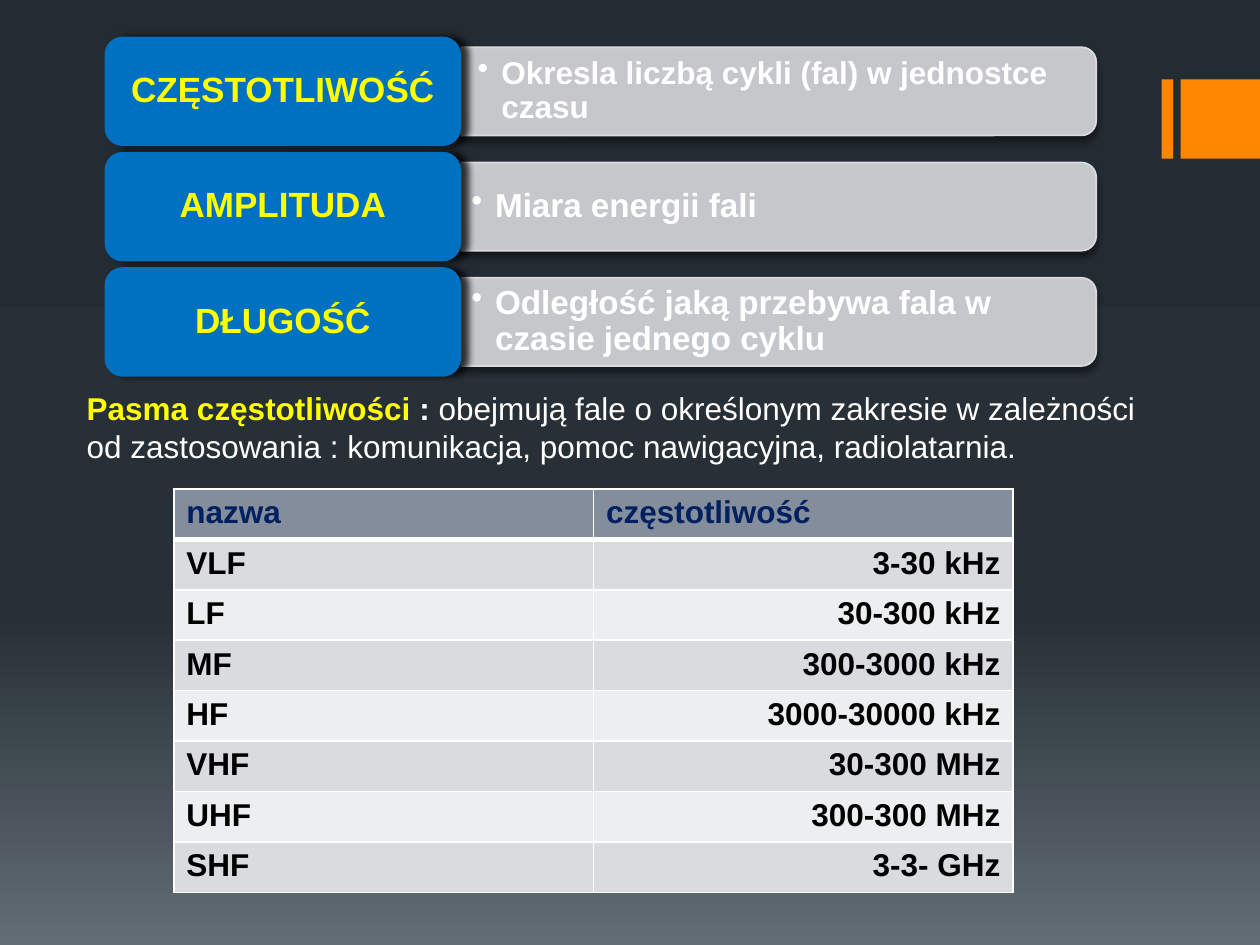
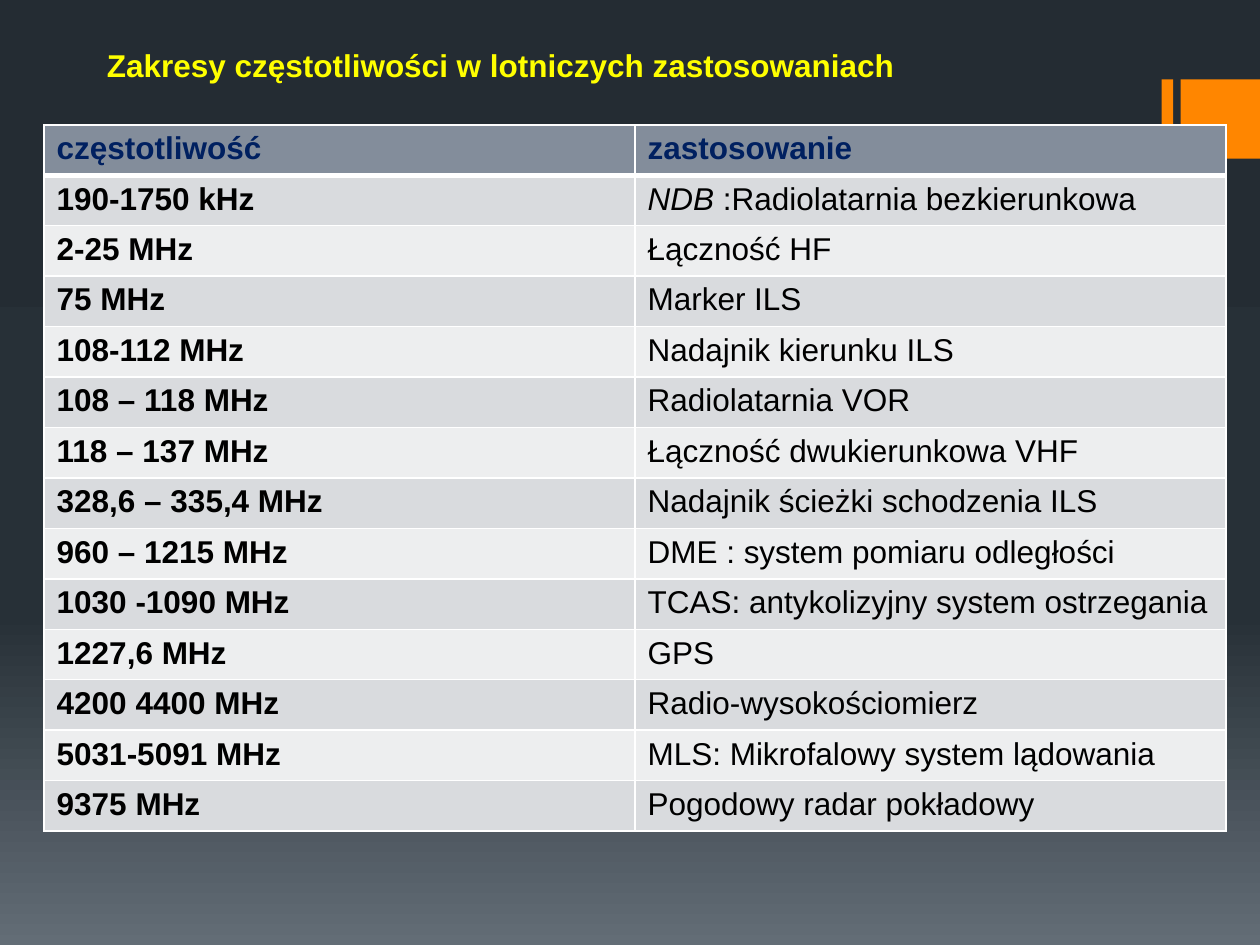
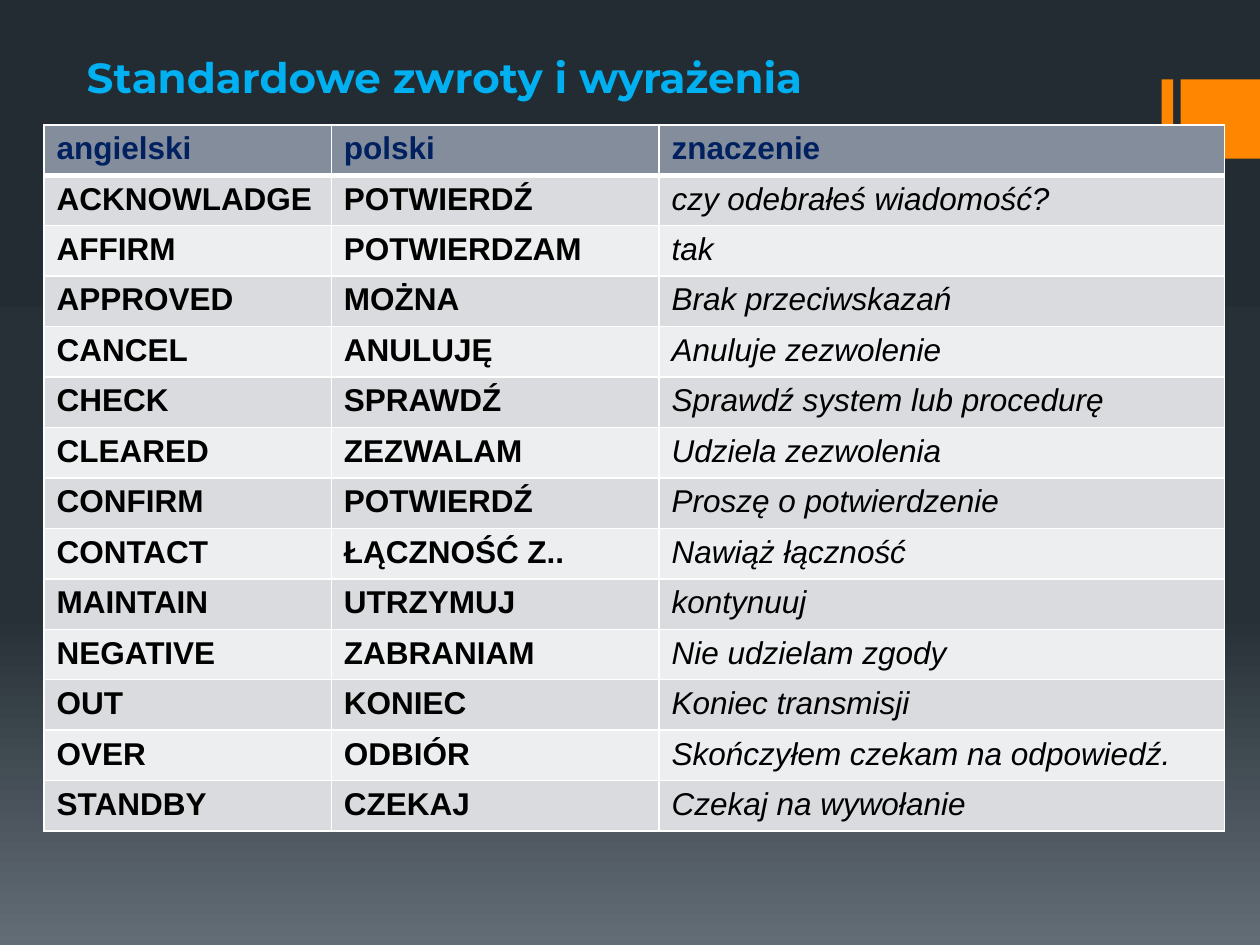
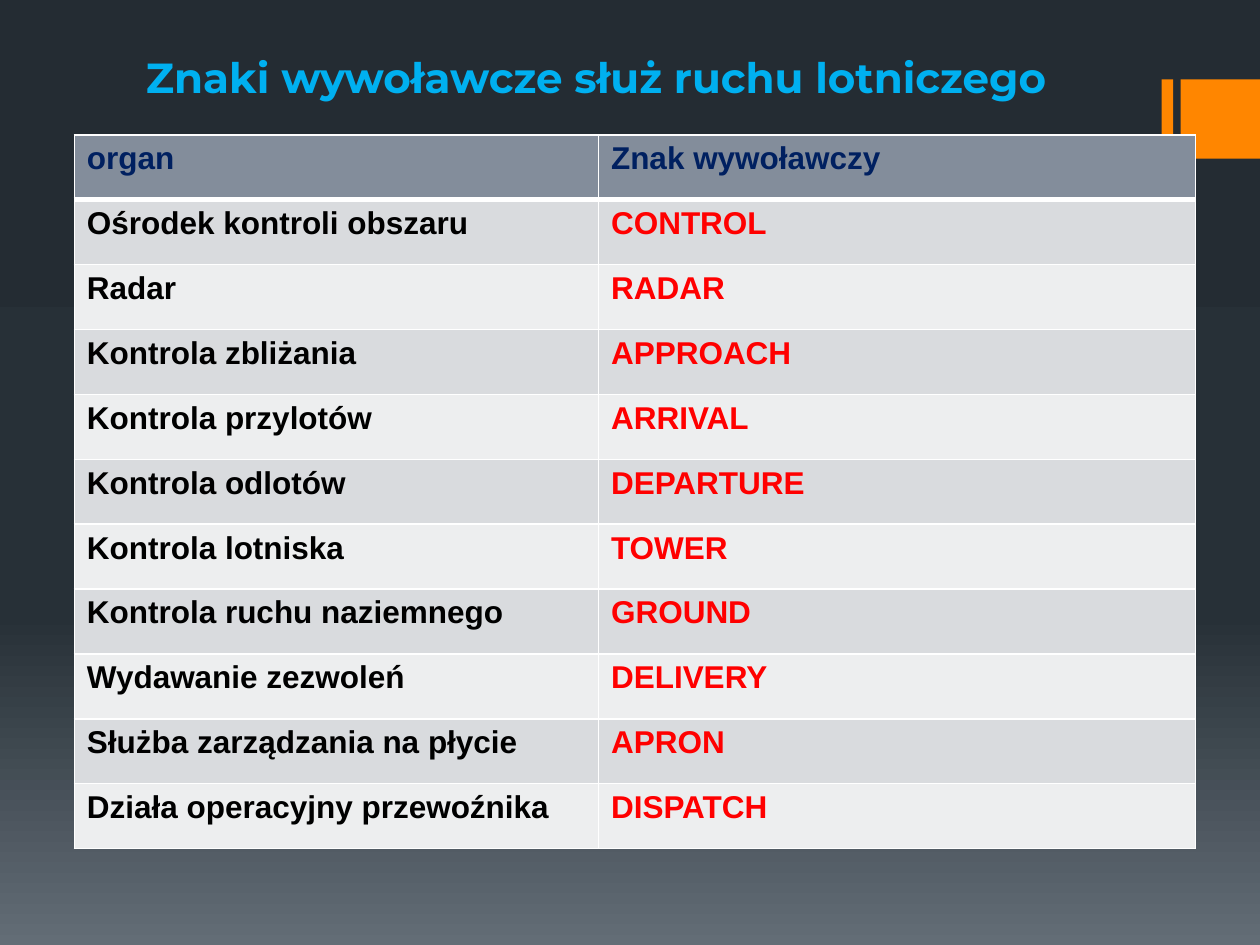
from dataclasses import dataclass
from typing import Optional, Union

import pptx
import pptx.dml.color
import pptx.enum.shapes
import pptx.enum.text
import pptx.oxml
import pptx.oxml.ns
import pptx.util

Inches = pptx.util.Inches
Pt = pptx.util.Pt
SHAPE = pptx.enum.shapes.MSO_SHAPE
ALIGN = pptx.enum.text.PP_ALIGN
MIDDLE = pptx.enum.text.MSO_ANCHOR.MIDDLE
NAMESPACE = pptx.oxml.ns.nsdecls("a")

COLORS = {
    "sky": "242C33",
    "dusk": "273037",
    "horizon": "636D76",
    "accent": "FF8600",
    "band": "D9DBDE",
    "light_band": "EDEEEF",
    "header": "838D9B",
    "header_text": "002060",
    "term": "0070C0",
    "highlight": "FFFF00",
    "title": "00B0F0",
    "call_sign": "FF0000",
    "white": "FFFFFF",
    "black": "000000",
}


@dataclass(frozen=True)
class TextStyle:
    color: str
    size: int = 18
    bold: bool = True
    italic: bool = False
    face: str = "Arial"
    align: Optional[ALIGN] = None


@dataclass(frozen=True)
class Run:
    text: str
    style: TextStyle


Content = Union[str, tuple[Run, ...]]


@dataclass(frozen=True)
class Definition:
    term: str
    meaning: str
    size: int = 19
    inset_x: float = 0.08
    inset_y: float = 0.04


@dataclass(frozen=True)
class Column:
    heading: str
    width: float
    style: TextStyle


@dataclass(frozen=True)
class Grid:
    left: float
    top: float
    row_height: float
    columns: tuple[Column, ...]
    rows: tuple[tuple[Content, ...], ...]


BOLD = TextStyle("black")
PLAIN = TextStyle("black", bold=False)
ITALIC = TextStyle("black", bold=False, italic=True)
RIGHT = TextStyle("black", align=ALIGN.RIGHT)
CALL_SIGN = TextStyle("call_sign")
HEADER = TextStyle("header_text")
HIGHLIGHT = TextStyle("highlight")
TERM = TextStyle("highlight", size=20, align=ALIGN.CENTER)
TITLE = TextStyle("title", size=24, face="Montserrat")

DEFINITIONS = (
    Definition("CZĘSTOTLIWOŚĆ", "Okresla liczbą cykli (fal) w jednostce czasu", 18, 0.13, 0.06),
    Definition("AMPLITUDA", "Miara energii fali"),
    Definition("DŁUGOŚĆ", "Odległość jaką przebywa fala w czasie jednego cyklu"),
)

BANDS_INTRO = (
    Run("Pasma częstotliwości ", HIGHLIGHT),
    Run(": ", TextStyle("white")),
    Run(
        "obejmują fale o określonym zakresie w zależności od zastosowania : "
        "komunikacja, pomoc nawigacyjna, radiolatarnia.",
        TextStyle("white", bold=False),
    ),
)

BANDS = Grid(
    1.38, 3.88, 0.4,
    (Column("nazwa", 3.33, BOLD), Column("częstotliwość", 3.33, RIGHT)),
    (
        ("VLF", "3-30 kHz"),
        ("LF", "30-300 kHz"),
        ("MF", "300-3000 kHz"),
        ("HF", "3000-30000 kHz"),
        ("VHF", "30-300 MHz"),
        ("UHF", "300-300 MHz"),
        ("SHF", "3-3- GHz"),
    ),
)

USES = Grid(
    0.35, 0.99, 0.4,
    (Column("częstotliwość", 4.69, BOLD), Column("zastosowanie", 4.69, PLAIN)),
    (
        ("190-1750 kHz", (Run("NDB", ITALIC), Run(" :Radiolatarnia bezkierunkowa", PLAIN))),
        ("2-25 MHz", "Łączność HF"),
        ("75 MHz", "Marker ILS"),
        ("108-112 MHz", "Nadajnik kierunku ILS"),
        ("108 – 118 MHz", "Radiolatarnia VOR"),
        ("118 – 137 MHz", "Łączność dwukierunkowa VHF"),
        ("328,6 – 335,4 MHz", "Nadajnik ścieżki schodzenia ILS"),
        ("960 – 1215 MHz", "DME : system pomiaru odległości"),
        ("1030 -1090 MHz", "TCAS: antykolizyjny system ostrzegania"),
        ("1227,6 MHz", "GPS"),
        ("4200 4400 MHz", "Radio-wysokościomierz"),
        ("5031-5091 MHz", "MLS: Mikrofalowy system lądowania"),
        ("9375 MHz", "Pogodowy radar pokładowy"),
    ),
)

PHRASES = Grid(
    0.35, 0.99, 0.4,
    (Column("angielski", 2.28, BOLD), Column("polski", 2.6, BOLD), Column("znaczenie", 4.49, ITALIC)),
    (
        ("ACKNOWLADGE", "POTWIERDŹ", "czy odebrałeś wiadomość?"),
        ("AFFIRM", "POTWIERDZAM", "tak"),
        ("APPROVED", "MOŻNA", "Brak przeciwskazań"),
        ("CANCEL", "ANULUJĘ", "Anuluje zezwolenie"),
        ("CHECK", "SPRAWDŹ", "Sprawdź system lub procedurę"),
        ("CLEARED", "ZEZWALAM", "Udziela zezwolenia"),
        ("CONFIRM", "POTWIERDŹ", "Proszę o potwierdzenie"),
        ("CONTACT", "ŁĄCZNOŚĆ Z..", "Nawiąż łączność"),
        ("MAINTAIN", "UTRZYMUJ", "kontynuuj"),
        ("NEGATIVE", "ZABRANIAM", "Nie udzielam zgody"),
        ("OUT", "KONIEC", "Koniec transmisji"),
        ("OVER", "ODBIÓR", "Skończyłem czekam na odpowiedź."),
        ("STANDBY", "CZEKAJ", "Czekaj na wywołanie"),
    ),
)

CALL_SIGNS = Grid(
    0.59, 1.07, 0.515,
    (Column("organ", 4.16, BOLD), Column("Znak wywoławczy", 4.74, CALL_SIGN)),
    (
        ("Ośrodek kontroli obszaru", "CONTROL"),
        ("Radar", "RADAR"),
        ("Kontrola zbliżania", "APPROACH"),
        ("Kontrola przylotów", "ARRIVAL"),
        ("Kontrola odlotów", "DEPARTURE"),
        ("Kontrola lotniska", "TOWER"),
        ("Kontrola ruchu naziemnego", "GROUND"),
        ("Wydawanie zezwoleń", "DELIVERY"),
        ("Służba zarządzania na płycie", "APRON"),
        ("Działa operacyjny przewoźnika", "DISPATCH"),
    ),
)


def rgb(name: str) -> pptx.dml.color.RGBColor:
    return pptx.dml.color.RGBColor.from_string(COLORS[name])


def xml(markup: str):
    return pptx.oxml.parse_xml(markup.replace(" ", f" {NAMESPACE} ", 1))


def apply_font(font, style: TextStyle) -> None:
    font.name = style.face
    font.size = Pt(style.size)
    font.bold = style.bold
    font.italic = style.italic
    font.color.rgb = rgb(style.color)


def write(frame, content: Content, style: TextStyle):
    paragraph = frame.paragraphs[0]
    if style.align is not None:
        paragraph.alignment = style.align
    if isinstance(content, str):
        paragraph.add_run().text = content
        apply_font(paragraph.font, style)
    else:
        for part in content:
            run = paragraph.add_run()
            run.text = part.text
            apply_font(run.font, part.style)
    return paragraph


def set_insets(frame, across: float, down: float) -> None:
    frame.margin_left = frame.margin_right = Inches(across)
    frame.margin_top = frame.margin_bottom = Inches(down)
    frame.vertical_anchor = MIDDLE
    frame.word_wrap = True


def add_text(slide, left: float, top: float, width: float, height: float,
             content: Content, style: TextStyle):
    box = slide.shapes.add_textbox(Inches(left), Inches(top), Inches(width), Inches(height))
    box.text_frame.word_wrap = True
    return box.text_frame, write(box.text_frame, content, style)


def add_block(slide, kind: SHAPE, left: float, top: float, width: float, height: float, color: str):
    block = slide.shapes.add_shape(kind, Inches(left), Inches(top), Inches(width), Inches(height))
    block.shadow.inherit = False
    block.fill.solid()
    block.fill.fore_color.rgb = rgb(color)
    block.line.fill.background()
    return block


def cast_shadow(shape, opacity: int, blur: float, distance: float, angle: int) -> None:
    effects = shape.element.spPr.find(pptx.oxml.ns.qn("a:effectLst"))
    effects.append(xml(
        f'<a:outerShdw blurRad="{Pt(blur)}" dist="{Pt(distance)}" dir="{angle * 60000}" '
        f'rotWithShape="0"><a:srgbClr val="{COLORS["black"]}">'
        f'<a:alpha val="{opacity * 1000}"/></a:srgbClr></a:outerShdw>'
    ))


def add_definition(slide, top: float, definition: Definition) -> None:
    term_height, bar_length, bar_height = 0.87, 5.04, 0.7
    middle = top + term_height / 2
    bar = add_block(slide, SHAPE.ROUND_2_SAME_RECTANGLE, 5.83, middle - bar_length / 2,
                    bar_height, bar_length, "band")
    bar.rotation = 90
    bar.line.color.rgb = rgb("band")
    bar.line.width = Pt(1)
    bar.element.spPr.xpath("./a:solidFill/a:srgbClr")[0].append(xml('<a:alpha val="90000"/>'))
    cast_shadow(bar, 48, 3.8, 3, 90)

    frame, meaning = add_text(slide, 3.66, middle - 0.315, 5.01, 0.63, definition.meaning,
                              TextStyle("white", definition.size))
    set_insets(frame, definition.inset_x, definition.inset_y)
    meaning.line_spacing = 0.9
    properties = meaning._p.get_or_add_pPr()
    properties.set("marL", str(Inches(0.19)))
    properties.set("indent", str(-Inches(0.19)))
    font_defaults = properties.find(pptx.oxml.ns.qn("a:defRPr"))
    font_defaults.addprevious(xml('<a:buChar char="•"/>'))

    term = add_block(slide, SHAPE.ROUNDED_RECTANGLE, 0.83, top, 2.83, term_height, "term")
    cast_shadow(term, 76, 4, 4, 0)
    set_insets(term.text_frame, 0.12, 0.08)
    write(term.text_frame, definition.term, TERM).line_spacing = 0.9


def style_cell(cell, color: str, top_line: int, bottom_line: int) -> None:
    properties = cell._tc.get_or_add_tcPr()
    for side, width in (("L", 1), ("R", 1), ("T", top_line), ("B", bottom_line)):
        properties.append(xml(
            f'<a:ln{side} w="{Pt(width)}"><a:solidFill>'
            f'<a:srgbClr val="{COLORS["white"]}"/></a:solidFill></a:ln{side}>'
        ))
    cell.fill.solid()
    cell.fill.fore_color.rgb = rgb(color)


def add_grid(slide, grid: Grid) -> None:
    lines = (tuple(column.heading for column in grid.columns), *grid.rows)
    width = sum(column.width for column in grid.columns)
    table = slide.shapes.add_table(
        len(lines), len(grid.columns), Inches(grid.left), Inches(grid.top),
        Inches(width), Inches(grid.row_height * len(lines)),
    ).table
    table.horz_banding = False
    for index, column in enumerate(grid.columns):
        table.columns[index].width = Inches(column.width)
    for row, line in enumerate(lines):
        table.rows[row].height = Inches(grid.row_height)
        color = "header" if row == 0 else "band" if row % 2 else "light_band"
        for index, content in enumerate(line):
            cell = table.cell(row, index)
            style_cell(cell, color, 3 if row == 1 else 1, 3 if row == 0 else 1)
            write(cell.text_frame, content, HEADER if row == 0 else grid.columns[index].style)


def set_background(master) -> None:
    master.background.fill.solid()
    stops = "".join(
        f'<a:gs pos="{position * 1000}"><a:srgbClr val="{COLORS[name]}"/></a:gs>'
        for position, name in ((0, "sky"), (65, "dusk"), (100, "horizon"))
    )
    solid = master.element.xpath(".//p:bgPr/a:solidFill")[0]
    solid.getparent().replace(solid, xml(
        f'<a:gradFill rotWithShape="1"><a:gsLst>{stops}</a:gsLst>'
        '<a:lin ang="5400000" scaled="0"/></a:gradFill>'
    ))


def add_slide(presentation):
    slide = presentation.slides.add_slide(presentation.slide_layouts[6])
    for left, width in ((9.22, 0.09), (9.37, 0.63)):
        add_block(slide, SHAPE.RECTANGLE, left, 0.63, width, 0.63, "accent")
    return slide


def main() -> None:
    presentation = pptx.Presentation()
    presentation.slide_width = Inches(10)
    presentation.slide_height = Inches(7.5)
    set_background(presentation.slide_master)

    waves = add_slide(presentation)
    for index, definition in enumerate(DEFINITIONS):
        add_definition(waves, 0.29 + 0.915 * index, definition)
    add_text(waves, 0.59, 3.04, 8.74, 0.71, BANDS_INTRO, HIGHLIGHT)
    add_grid(waves, BANDS)

    uses = add_slide(presentation)
    add_text(uses, 0.75, 0.32, 7.95, 0.4, "Zakresy częstotliwości w lotniczych zastosowaniach", HIGHLIGHT)
    add_grid(uses, USES)

    for heading, left, grid in (
        ("Standardowe zwroty i wyrażenia", 0.59, PHRASES),
        ("Znaki wywoławcze służ ruchu lotniczego", 1.06, CALL_SIGNS),
    ):
        slide = add_slide(presentation)
        add_text(slide, left, 0.36, 8.03, 0.5, heading, TITLE)
        add_grid(slide, grid)

    presentation.save("out.pptx")


if __name__ == "__main__":
    main()
